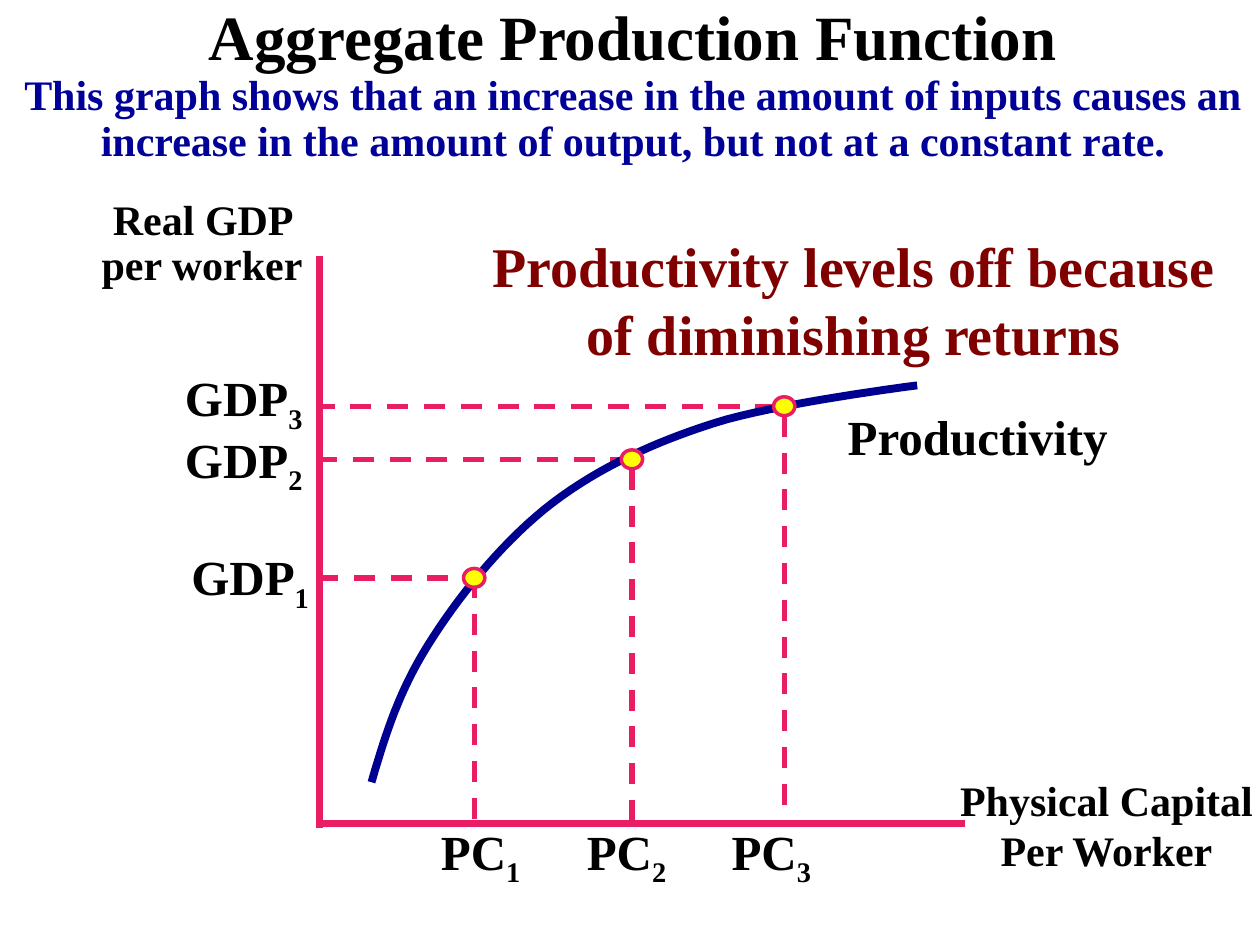
import pptx
import pptx.util
import pptx.dml.color
import pptx.enum.dml
import pptx.enum.shapes
import pptx.enum.text
import pptx.oxml.ns
from lxml import etree

Cm, Pt = pptx.util.Cm, pptx.util.Pt
ALIGN = pptx.enum.text.PP_ALIGN
FONT = "Times New Roman"
COLORS = {"black": "000000", "blue": "000099", "maroon": "800000",
          "axis": "E91D63", "curve": "000090", "marker": "FFFF00"}

TITLE = [
    ("Aggregate Production Function", 36, "black"),
    ("This graph shows that an increase in the amount of inputs causes an "
     "increase in the amount of output, but not at a constant rate.", 24, "blue"),
]
NOTES = [
    ("Real GDP per worker", (1.7, 3.89, 4.75, 2.11), 24, "black", ALIGN.CENTER, 0.9),
    ("Physical Capital Per Worker", (18.95, 15.49, 6.71, 1.27), 24, "black", ALIGN.CENTER, None),
    ("Productivity", (16.84, 8.08, 7.42, 1.45), 28, "black", ALIGN.LEFT, None),
    ("Productivity levels off because of diminishing returns",
     (9.35, 4.55, 15.72, 1.45), 32, "maroon", ALIGN.CENTER, None),
]
AXES = [((6.45, 5.16), (6.45, 16.69)), ((6.4, 16.61), (19.46, 16.61))]
POINTS = [
    {"center": (9.56, 11.65), "across": (9.78, 6.5), "down": (11.63, 16.69),
     "gdp": (3.61, 10.9), "pc": (8.64, 16.43)},
    {"center": (12.74, 9.26), "across": (12.73, 6.45), "down": (9.45, 16.61),
     "gdp": (3.48, 8.53), "pc": (11.58, 16.43)},
    {"center": (15.81, 8.19), "across": (15.65, 6.5), "down": (8.38, 16.46),
     "gdp": (3.48, 7.29), "pc": (14.5, 16.43)},
]
CURVE_START = (7.49, 15.77)
CURVE = [
    ((7.85, 14.53), (8.13, 13.77), (8.74, 12.83)),
    ((9.35, 11.89), (10.21, 10.85), (11.15, 10.13)),
    ((12.09, 9.42), (13.18, 8.92), (14.4, 8.53)),
    ((15.65, 8.13), (18.49, 7.77), (18.49, 7.77)),
]
STEPS = 16
MARKER = (0.43, 0.38)


def rgb(name):
    return pptx.dml.color.RGBColor.from_string(COLORS[name])


def add_run(p, text, size, color, subscript=False):
    r = p.add_run()
    r.text = text
    r.font.name, r.font.size, r.font.bold = FONT, Pt(size), True
    r.font.color.rgb = rgb(color)
    if subscript:
        r.font._element.set("baseline", "-25000")


def add_box(s, box):
    tf = s.shapes.add_textbox(*map(Cm, box)).text_frame
    tf.word_wrap = True
    return tf.paragraphs[0]


def add_label(s, name, number, left_top, width):
    p = add_box(s, (*left_top, width, 1.45))
    add_run(p, name, 28, "black")
    add_run(p, str(number), 28, "black", True)


def add_line(s, start, end, width, dashed=False):
    c = s.shapes.add_connector(pptx.enum.shapes.MSO_CONNECTOR.STRAIGHT,
                               *map(Cm, start + end))
    c.line.color.rgb = rgb("axis")
    c.line.width = Pt(width)
    if dashed:
        c.line.dash_style = pptx.enum.dml.MSO_LINE.DASH
    etree.SubElement(c._element.spPr, pptx.oxml.ns.qn("a:effectLst"))


def bezier(a, b, c, d, t):
    u = 1 - t
    return tuple(Cm(u**3 * i + 3 * u * u * t * j + 3 * u * t * t * k + t**3 * m)
                 for i, j, k, m in zip(a, b, c, d))


def add_curve(s):
    vertices, start = [], CURVE_START
    for b, c, end in CURVE:
        vertices += [bezier(start, b, c, end, n / STEPS) for n in range(1, STEPS + 1)]
        start = end
    builder = s.shapes.build_freeform(*map(Cm, CURVE_START))
    builder.add_line_segments(vertices, close=False)
    sp = builder.convert_to_shape()
    sp.shadow.inherit = False
    sp.fill.background()
    sp.line.color.rgb = rgb("curve")
    sp.line.width = Pt(4.5)


def add_marker(s, center):
    corner = [c - size / 2 for c, size in zip(center, MARKER)]
    sp = s.shapes.add_shape(pptx.enum.shapes.MSO_SHAPE.FLOWCHART_CONNECTOR,
                            *map(Cm, (*corner, *MARKER)))
    sp.shadow.inherit = False
    sp.fill.solid()
    sp.fill.fore_color.rgb = rgb("marker")
    sp.line.color.rgb = rgb("axis")
    sp.line.width = Pt(2)


def add_title(s):
    title = s.shapes.title
    title.left, title.top, title.width, title.height = map(Cm, (0.1, 0, 25.32, 5.79))
    tf = title.text_frame
    tf.word_wrap = True
    tf.auto_size = pptx.enum.text.MSO_AUTO_SIZE.NONE
    tf.vertical_anchor = pptx.enum.text.MSO_ANCHOR.TOP
    for i, (text, size, color) in enumerate(TITLE):
        p = tf.add_paragraph() if i else tf.paragraphs[0]
        p.alignment, p.line_spacing = ALIGN.CENTER, 0.9
        add_run(p, text, size, color)


def main():
    prs = pptx.Presentation()
    prs.slide_width, prs.slide_height = Cm(25.4), Cm(19.05)
    s = prs.slides.add_slide(prs.slide_layouts[5])
    add_title(s)
    for start, end in AXES:
        add_line(s, start, end, 4)
    for point in POINTS:
        x, y = point["center"]
        x1, x2 = point["across"]
        y1, y2 = point["down"]
        add_line(s, (x1, y), (x2, y), 3, True)
        add_line(s, (x, y1), (x, y2), 3, True)
    add_curve(s)
    for number, point in enumerate(POINTS, 1):
        add_marker(s, point["center"])
        add_label(s, "GDP", number, point["gdp"], 2.92)
        add_label(s, "PC", number, point["pc"], 2.29)
    for text, box, size, color, align, spacing in NOTES:
        p = add_box(s, box)
        p.alignment, p.line_spacing = align, spacing
        add_run(p, text, size, color)
    prs.save("out.pptx")


if __name__ == "__main__":
    main()
